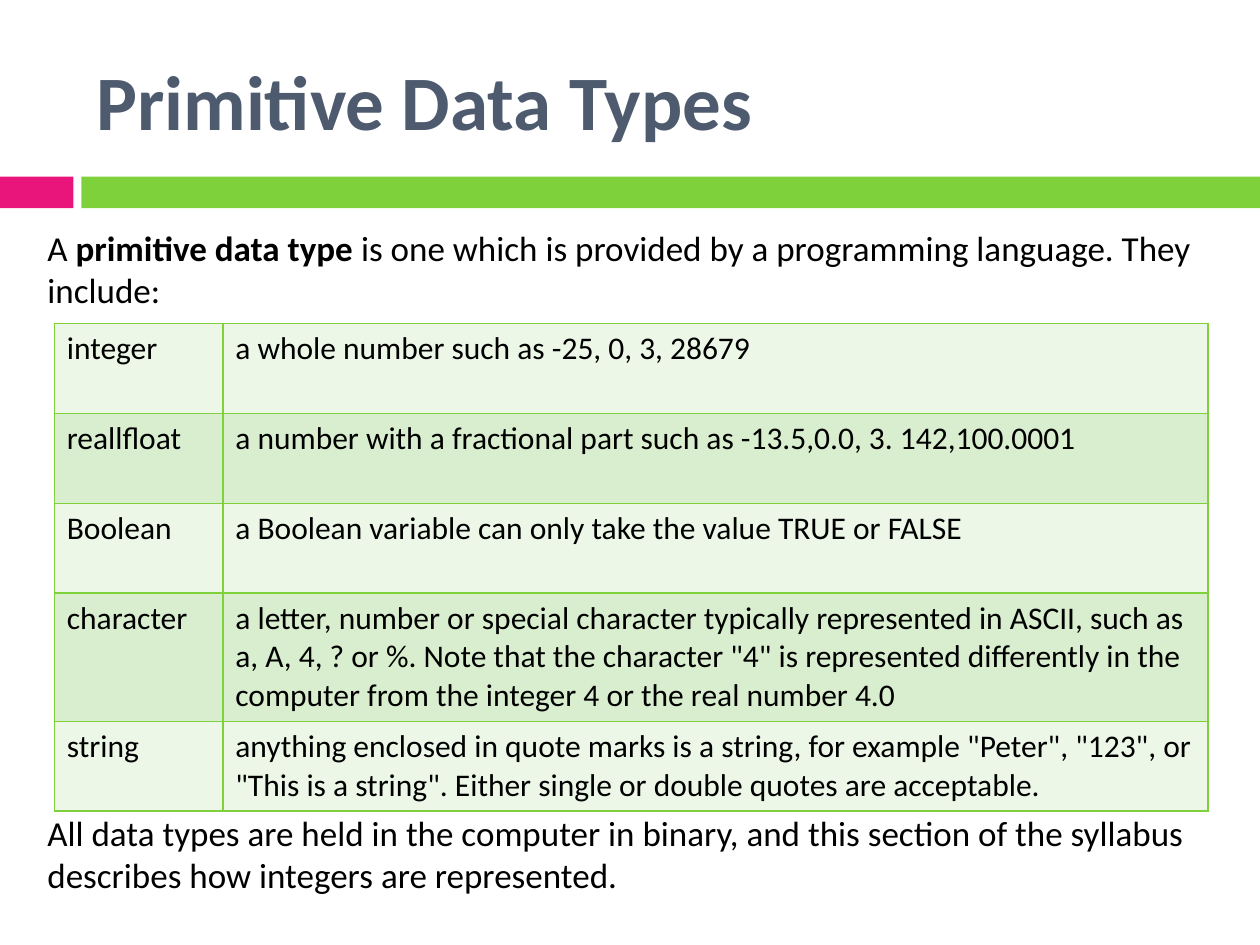
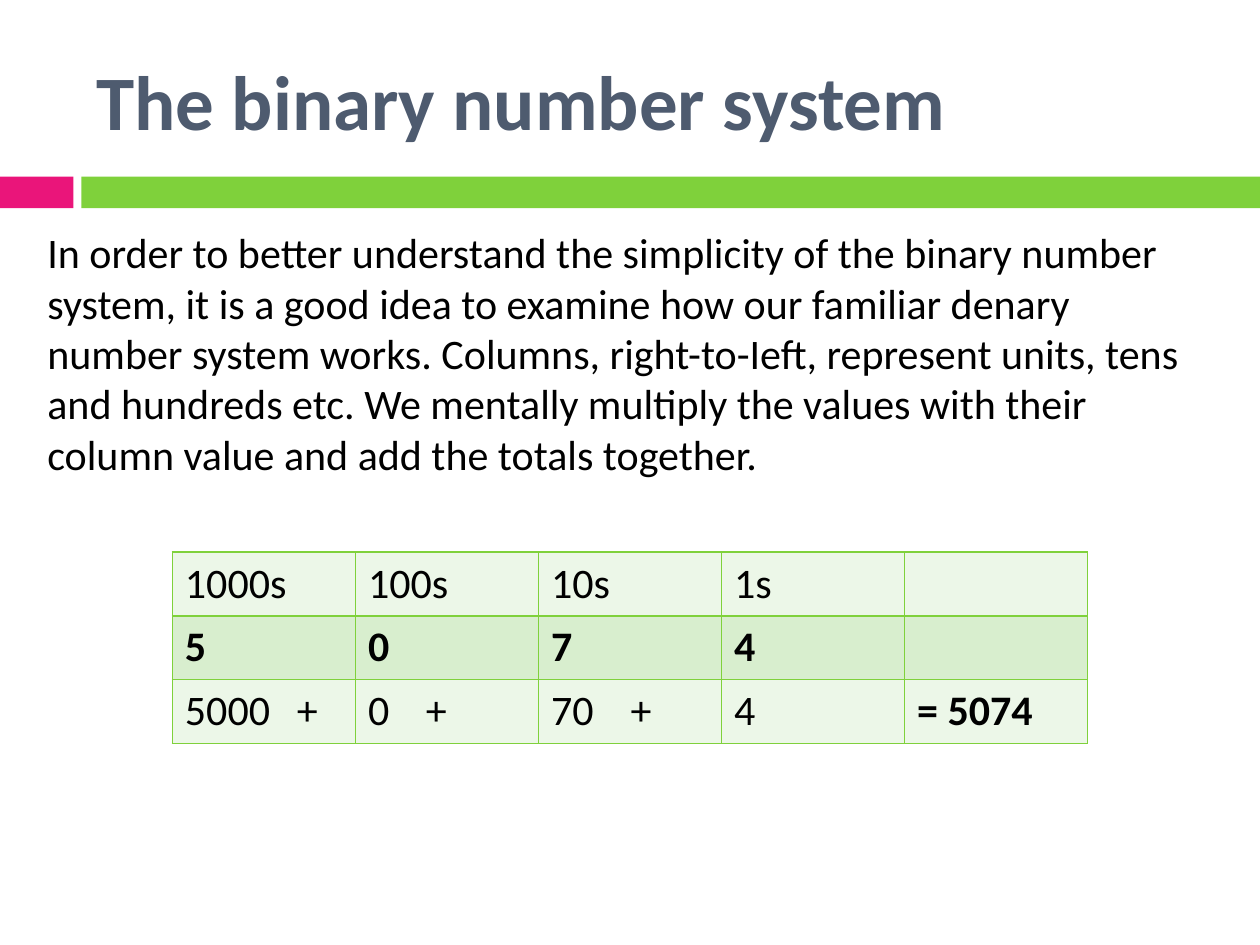
from dataclasses import dataclass

from lxml import etree
from pptx import Presentation
from pptx.dml.color import RGBColor
from pptx.enum import shapes, text
from pptx.oxml import ns
from pptx.util import Pt


@dataclass(frozen=True)
class Theme:
    font: str = "Calibri"
    ink: str = "000000"
    slate: str = "4E5B6F"
    pink: str = "EA157A"
    green: str = "7FD13B"
    bands: tuple = ("ECF7E8", "D8EECE")
    title: int = 44
    large: int = 24
    body: int = 20
    small: int = 18
    gap: int = 7


class Deck:
    def __init__(self, theme):
        self.theme = theme
        self.prs = Presentation()
        self.prs.slide_width, self.prs.slide_height = Pt(720), Pt(540)
        self.slide = None

    def start(self, title):
        """Add a slide with the shared band and title."""
        t = self.theme
        self.slide = self.prs.slides.add_slide(self.prs.slide_layouts[6])
        self.bar(0, 42, t.pink)
        self.bar(46.5, 673.5, t.green)
        frame = self.box(48, 18, 624, 78)
        frame.vertical_anchor = text.MSO_ANCHOR.MIDDLE
        self.words(frame.paragraphs[0], [(title, True)], t.title, t.slate)

    def bar(self, left, width, color):
        bar = self.slide.shapes.add_shape(
            shapes.MSO_SHAPE.RECTANGLE, Pt(left), Pt(101), Pt(width), Pt(18))
        bar.shadow.inherit = False
        bar.fill.solid()
        bar.fill.fore_color.rgb = RGBColor.from_string(color)
        bar.line.fill.background()

    def box(self, left, top, width, height):
        frame = self.slide.shapes.add_textbox(
            Pt(left), Pt(top), Pt(width), Pt(height)).text_frame
        frame.word_wrap = True
        return frame

    def words(self, para, runs, size, color=None):
        """Fill a paragraph from (wording, bold) pairs."""
        font = para.font
        font.name, font.size = self.theme.font, Pt(size)
        font.color.rgb = RGBColor.from_string(color or self.theme.ink)
        same = len({bold for _, bold in runs}) == 1
        if same:
            font.bold = runs[0][1]
        for wording, bold in runs:
            run = para.add_run()
            run.text = wording
            if not same:
                run.font.bold = bold

    def body(self, paras, size):
        """Place the main text; each item is (space before, runs)."""
        frame = self.box(20, 126, 670, 138)
        for i, (space, runs) in enumerate(paras):
            para = frame.add_paragraph() if i else frame.paragraphs[0]
            para.space_before = Pt(space)
            self.words(para, runs, size)

    def table(self, left, top, cols, rows, data, size, strong=(), stops=None):
        """Draw a banded grid; strong and stops are keyed by (row, column)."""
        grid = self.slide.shapes.add_table(
            len(rows), len(cols), Pt(left), Pt(top),
            Pt(sum(cols)), Pt(sum(rows))).table
        for col, width in zip(grid.columns, cols):
            col.width = Pt(width)
        for r, (row, height) in enumerate(zip(grid.rows, rows)):
            row.height = Pt(height)
            for c, cell in enumerate(row.cells):
                cell.fill.solid()
                cell.fill.fore_color.rgb = RGBColor.from_string(
                    self.theme.bands[r % 2])
                self.border(cell)
                para = cell.text_frame.paragraphs[0]
                if data[r][c]:
                    self.words(para, [(data[r][c], (r, c) in strong)], size)
                if stops and (r, c) in stops:
                    self.tab(para, stops[r, c])

    def border(self, cell):
        props = cell._tc.get_or_add_tcPr()
        for i, side in enumerate(("lnL", "lnR", "lnT", "lnB")):
            line = etree.Element(ns.qn("a:" + side), w=str(Pt(1)))
            fill = etree.SubElement(line, ns.qn("a:solidFill"))
            etree.SubElement(fill, ns.qn("a:srgbClr"), val=self.theme.green)
            props.insert(i, line)

    def tab(self, para, pos):
        stops = etree.Element(ns.qn("a:tabLst"))
        etree.SubElement(stops, ns.qn("a:tab"), pos=str(Pt(pos)), algn="l")
        para._p.get_or_add_pPr().insert(0, stops)


def types_slide(deck):
    t = deck.theme
    deck.start("Primitive Data Types")
    # The closing paragraph sits below the table
    deck.body([
        (t.gap, [("A ", False), ("primitive data type ", True),
                 ("is one which is provided by a programming language. "
                  "They include:", False)]),
        (286, [("All data types are held in the computer in binary, and this "
                "section of the syllabus describes how integers are "
                "represented.", False)]),
    ], t.body)
    data = [
        ("integer", "a whole number such as -25, 0, 3, 28679"),
        ("reallfloat", "a number with a fractional part such as "
                       "-13.5,0.0, 3. 142,100.0001"),
        ("Boolean", "a Boolean variable can only take the value TRUE or FALSE"),
        ("character", "a letter, number or special character typically "
                      "represented in ASCII, such as a, A, 4, ? or %. Note "
                      "that the character \"4\" is represented differently in "
                      "the computer from the integer 4 or the real number 4.0"),
        ("string", "anything enclosed in quote marks is a string, for example "
                   "\"Peter\", \"123\", or \"This is a string\". Either single "
                   "or double quotes are acceptable."),
    ]
    two, three = 51.4, 73.2
    deck.table(31, 184.8, [96.3, 563], [two, two, two, three, two],
               data, t.small)


def binary_slide(deck):
    t = deck.theme
    deck.start("The binary number system")
    deck.body([(t.gap, [(
        "In order to better understand the simplicity of the binary number "
        "system, it is a good idea to examine how our familiar denary number "
        "system works. Columns, right-to-Ieft, represent units, tens and "
        "hundreds etc. We mentally multiply the values with their column "
        "value and add the totals together.", False)])], t.large)
    # Place values, digits and their sum
    data = [
        ("1000s", "100s", "10s", "1s", ""),
        ("5", "0", "7", "4", ""),
        ("5000\t+", "0\t+", "70\t+", "4", "= 5074"),
    ]
    strong = {(1, c) for c in range(4)} | {(2, 4)}
    stops = {(2, 0): 64, (2, 1): 33, (2, 2): 45.5}
    deck.table(98.5, 315.4, [104.6] * 5, [36.5] * 3, data, t.large,
               strong, stops)


def main():
    deck = Deck(Theme())
    types_slide(deck)
    binary_slide(deck)
    deck.prs.save("out.pptx")


if __name__ == "__main__":
    main()
